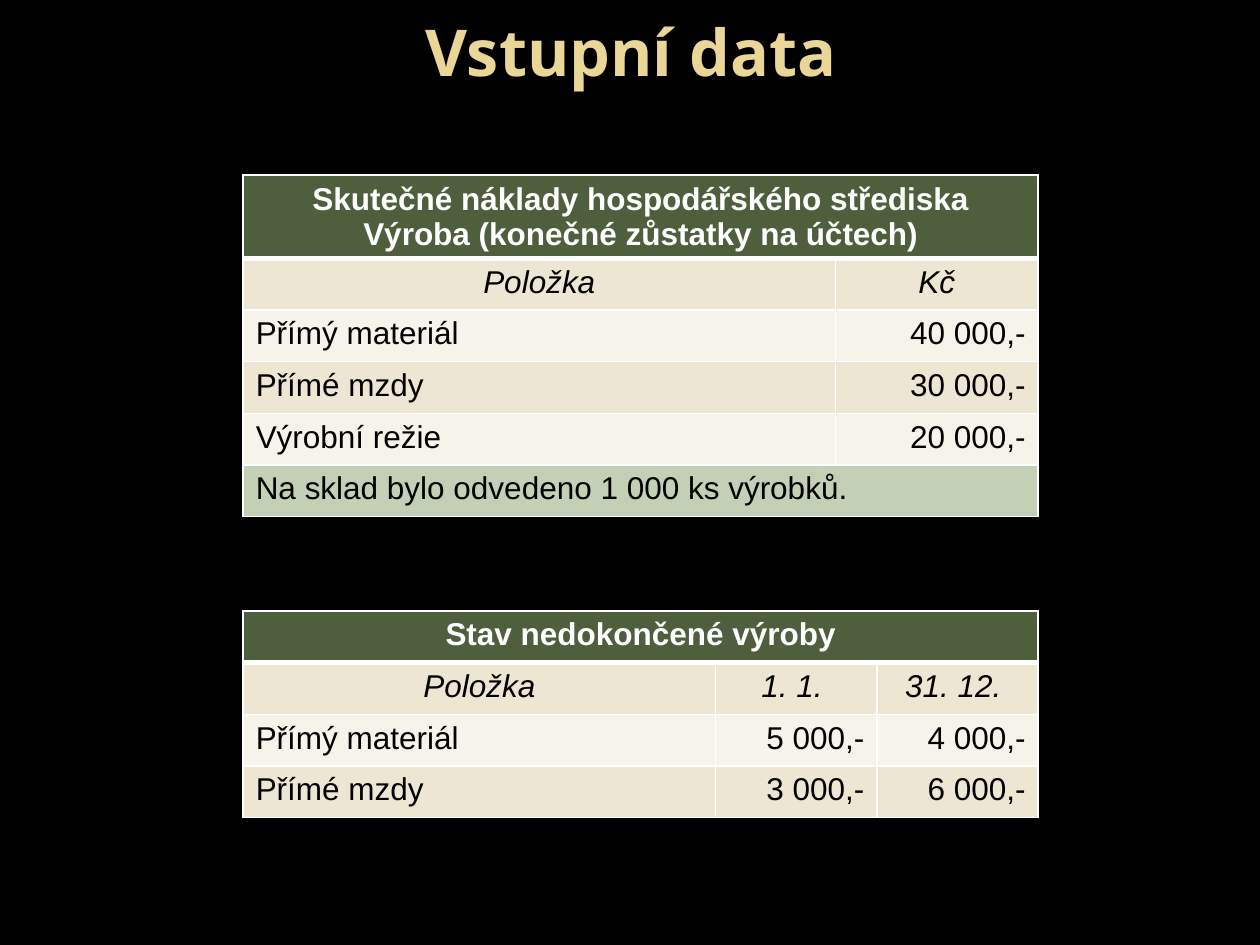
from lxml import etree
from pptx import Presentation
from pptx.dml.color import RGBColor
from pptx.enum.text import MSO_ANCHOR, MSO_AUTO_SIZE, PP_ALIGN as AL
from pptx.oxml.ns import qn
from pptx.util import Inches, Pt

HEADER, SAND, CREAM, NOTE = "4F5E3C", "EDE6D3", "F6F3EA", "C4D0B5"
WHITE, BLACK, GOLD = "FFFFFF", "000000", "EAD696"


def rgb(color):
    return RGBColor.from_string(color)


class Deck:
    title_font, body_font = "Open Sans", "Arial"
    title_size, body_size = Pt(36.9), Pt(18)
    row_height = Inches(0.41)

    def __init__(self, width, height):
        self.prs = Presentation()
        self.prs.slide_width, self.prs.slide_height = Inches(width), Inches(height)

    def add_slide(self, background):
        self.s = self.prs.slides.add_slide(self.prs.slide_layouts[5])
        fill = self.s.background.fill
        fill.solid()
        fill.fore_color.rgb = rgb(background)

    def title(self, text, left, top, width, height):
        sp = self.s.shapes.title
        sp.left, sp.top = Inches(left), Inches(top)
        sp.width, sp.height = Inches(width), Inches(height)
        tf = sp.text_frame
        tf.text = text
        tf.auto_size = MSO_AUTO_SIZE.NONE
        tf.vertical_anchor = MSO_ANCHOR.MIDDLE
        p = tf.paragraphs[0]
        p.alignment = AL.CENTER
        p.font.name, p.font.size, p.font.bold = self.title_font, self.title_size, True
        p.font.color.rgb = rgb(GOLD)

    def borders(self, cell, top, bottom):
        tcPr = cell._tc.get_or_add_tcPr()
        for side, width in (("L", 1), ("R", 1), ("T", top), ("B", bottom)):
            ln = etree.SubElement(tcPr, qn(f"a:ln{side}"), w=str(Pt(width)))
            fill = etree.SubElement(ln, qn("a:solidFill"))
            etree.SubElement(fill, qn("a:srgbClr"), val=WHITE)

    def cell(self, cell, text, fill, align, color=BLACK, bold=False, italic=False):
        cell.fill.solid()
        cell.fill.fore_color.rgb = rgb(fill)
        cell.text = text
        p = cell.text_frame.paragraphs[0]
        p.alignment = align
        f = p.font
        f.name, f.size, f.bold, f.italic = self.body_font, self.body_size, bold, italic
        f.color.rgb = rgb(color)

    def table(self, heading, labels, items, left, top, widths, note=None):
        """Merged heading, italic column labels, banded items, optional merged note."""
        rows = [[heading], labels, *items] + ([[note]] if note else [])
        last = len(widths) - 1
        frame = self.s.shapes.add_table(len(rows), len(widths), Inches(left), Inches(top),
                                        Inches(sum(widths)), self.row_height * len(rows))
        tbl = frame.table
        for column, width in zip(tbl.columns, widths):
            column.width = Inches(width)
        for i, row in enumerate(rows):
            tbl.rows[i].height = self.row_height
            for j in range(len(widths)):
                self.borders(tbl.cell(i, j), 3 if i == 1 else 1, 3 if i == 0 else 1)
            if len(row) == 1:
                tbl.cell(i, 0).merge(tbl.cell(i, last))
            for j, text in enumerate(row):
                cell = tbl.cell(i, j)
                if i == 0:
                    self.cell(cell, text, HEADER, AL.CENTER, WHITE, bold=True)
                elif i == 1:
                    self.cell(cell, text, SAND, AL.CENTER, italic=True)
                elif len(row) == 1:
                    self.cell(cell, text, NOTE, AL.LEFT)
                else:
                    self.cell(cell, text, SAND if i % 2 else CREAM,
                              AL.RIGHT if j else AL.LEFT)


def main():
    deck = Deck(10, 7.5)
    deck.add_slide(BLACK)
    deck.title("Vstupní data", 0.51, 0.13, 9, 0.54)

    # Actual costs
    deck.table("Skutečné náklady hospodářského střediska Výroba (konečné zůstatky na účtech)",
               ["Položka", "Kč"],
               [["Přímý materiál", "40 000,-"],
                ["Přímé mzdy", "30 000,-"],
                ["Výrobní režie", "20 000,-"]],
               1.93, 1.39, [4.7, 1.61],
               note="Na sklad bylo odvedeno 1 000 ks výrobků.")

    # Work in progress
    deck.table("Stav nedokončené výroby",
               ["Položka", "1. 1. ", "31. 12. "],
               [["Přímý materiál", "5 000,-", "4 000,-"],
                ["Přímé mzdy", "3 000,-", "6 000,-"]],
               1.93, 4.85, [3.75, 1.28, 1.28])

    deck.prs.save("out.pptx")


if __name__ == "__main__":
    main()
